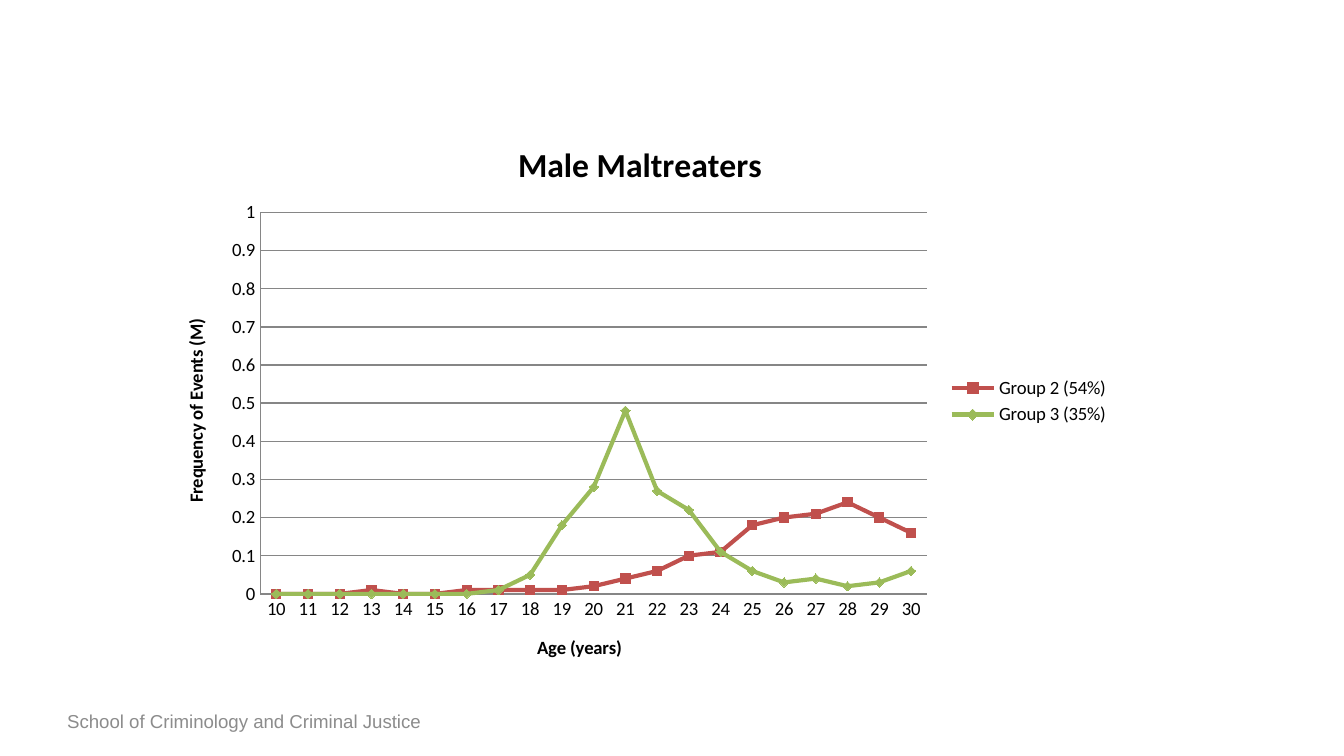
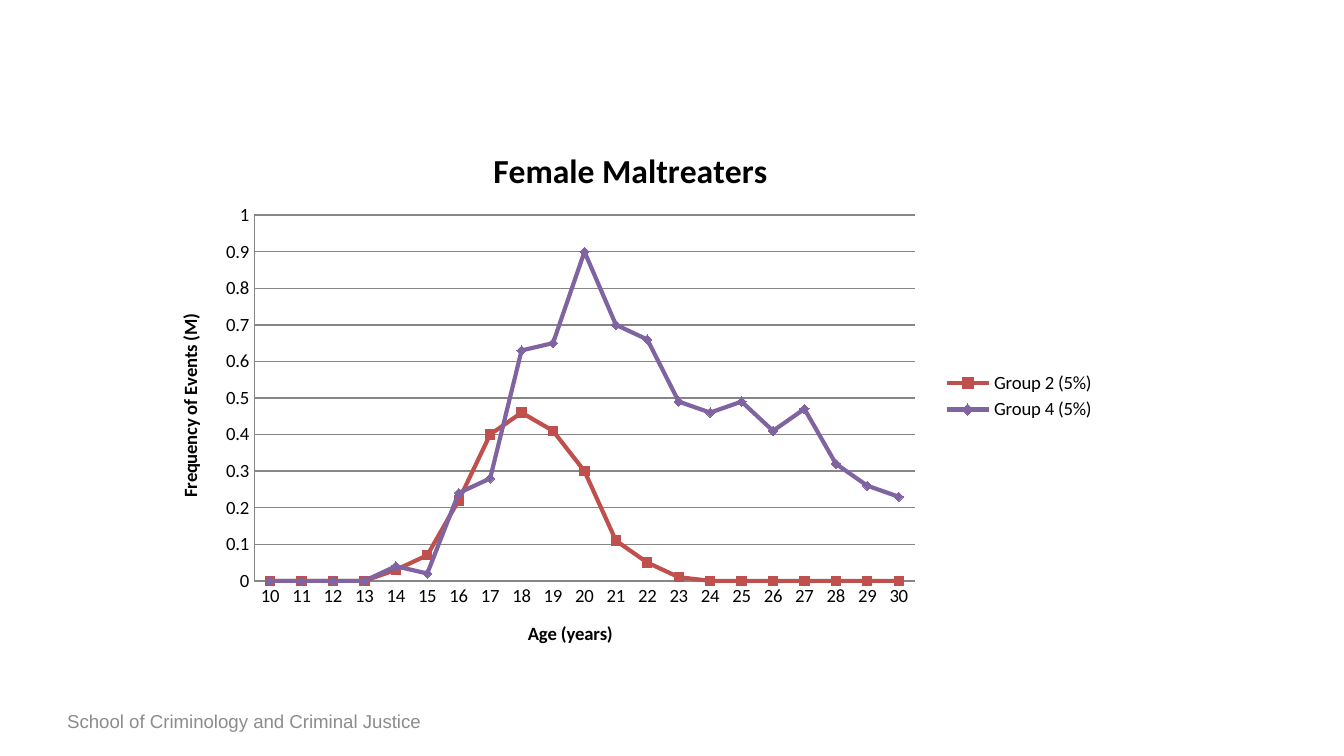
"""Build two slides that chart how often maltreatment occurs by age."""
from dataclasses import dataclass

from lxml.etree import SubElement
from pptx import Presentation
from pptx.chart.data import CategoryChartData
from pptx.dml.color import RGBColor
from pptx.enum.chart import XL_CHART_TYPE, XL_LEGEND_POSITION, XL_MARKER_STYLE, XL_TICK_MARK
from pptx.enum.text import MSO_ANCHOR
from pptx.oxml.ns import qn
from pptx.util import Emu, Pt

SCALE = 5715
BLACK = RGBColor(0x00, 0x00, 0x00)
GREY = RGBColor(0x8C, 0x8C, 0x8C)
RULE = RGBColor(0x86, 0x86, 0x86)
RED = RGBColor(0xC0, 0x50, 0x4D)
GREEN = RGBColor(0x9B, 0xBB, 0x59)
PURPLE = RGBColor(0x80, 0x64, 0xA2)
AGES = [str(age) for age in range(10, 31)]
MARKS = (XL_MARKER_STYLE.SQUARE, XL_MARKER_STYLE.DIAMOND)


@dataclass(frozen=True)
class Box:
    left: int
    top: int
    width: int
    height: int

    def emu(self) -> tuple:
        return tuple(px(n) for n in (self.left, self.top, self.width, self.height))


@dataclass(frozen=True)
class Group:
    name: str
    color: RGBColor
    values: tuple


@dataclass(frozen=True)
class Panel:
    title: str
    box: Box
    groups: tuple


FOOTER = Box(80, 834, 1440, 48)
PANELS = (
    Panel("Male Maltreaters", Box(187, 139, 1150, 678), (
        Group("Group 2 (54%)", RED, (
            0, 0, 0, 0.01, 0, 0, 0.01, 0.01, 0.01, 0.01, 0.02,
            0.04, 0.06, 0.1, 0.11, 0.18, 0.2, 0.21, 0.24, 0.2, 0.16)),
        Group("Group 3 (35%)", GREEN, (
            0, 0, 0, 0, 0, 0, 0, 0.01, 0.05, 0.18, 0.28,
            0.48, 0.27, 0.22, 0.11, 0.06, 0.03, 0.04, 0.02, 0.03, 0.06)),
    )),
    Panel("Female Maltreaters", Box(181, 147, 1139, 650), (
        Group("Group 2 (5%)", RED, (
            0, 0, 0, 0, 0.03, 0.07, 0.22, 0.4, 0.46, 0.41, 0.3,
            0.11, 0.05, 0.01, 0, 0, 0, 0, 0, 0, 0)),
        Group("Group 4 (5%)", PURPLE, (
            0, 0, 0, 0, 0.04, 0.02, 0.24, 0.28, 0.63, 0.65, 0.9,
            0.7, 0.66, 0.49, 0.46, 0.49, 0.41, 0.47, 0.32, 0.26, 0.23)),
    )),
)


def px(count: int) -> Emu:
    return Emu(count * SCALE)


def write(frame, text: str, *, size: int = 10, bold: bool = False,
          font: str = "Calibri", color: RGBColor = BLACK) -> None:
    run = frame.paragraphs[0].add_run()
    run.text = text
    run.font.size = Pt(size)
    run.font.bold = bold
    run.font.name = font
    run.font.color.rgb = color


def add_footer(slide) -> None:
    frame = slide.shapes.add_textbox(*FOOTER.emu()).text_frame
    frame.margin_left = frame.margin_right = frame.margin_top = frame.margin_bottom = 0
    frame.word_wrap = True
    frame.vertical_anchor = MSO_ANCHOR.MIDDLE
    write(frame, "School of Criminology and Criminal Justice", font="Arial", color=GREY)


def rule(line) -> None:
    line.color.rgb = RULE
    line.width = Pt(0.75)


def style_axis(axis, title: str) -> None:
    axis.major_tick_mark = axis.minor_tick_mark = XL_TICK_MARK.NONE
    rule(axis.format.line)
    write(axis.axis_title.text_frame, title, bold=True)


def style_line(line, group: Group, mark: XL_MARKER_STYLE) -> None:
    line.smooth = False
    line.format.line.color.rgb = group.color
    line.format.line.width = Pt(2.25)
    line.marker.style = mark
    line.marker.size = 5
    line.marker.format.fill.solid()
    line.marker.format.fill.fore_color.rgb = group.color
    line.marker.format.line.color.rgb = group.color


def set_plot(chart) -> None:
    area = chart.element.find(".//" + qn("c:plotArea"))
    layout = area.find(qn("c:layout"))
    if layout is None:
        layout = SubElement(area, qn("c:layout"))
        area.insert(0, layout)
    manual = SubElement(layout, qn("c:manualLayout"))
    for tag, value in (("layoutTarget", "inner"), ("xMode", "edge"), ("yMode", "edge"),
                       ("x", "0.107"), ("y", "0.168"), ("w", "0.69"), ("h", "0.67")):
        SubElement(manual, qn("c:" + tag)).set("val", value)


def add_panel(slide, panel: Panel) -> None:
    data = CategoryChartData()
    data.categories = AGES
    for group in panel.groups:
        data.add_series(group.name, group.values)
    chart = slide.shapes.add_chart(XL_CHART_TYPE.LINE_MARKERS, *panel.box.emu(), data).chart
    chart.font.name = "Calibri"
    chart.font.size = Pt(10)
    chart.font.color.rgb = BLACK
    write(chart.chart_title.text_frame, panel.title, size=18, bold=True)
    chart.chart_title.include_in_layout = False
    chart.has_legend = True
    chart.legend.position = XL_LEGEND_POSITION.RIGHT
    chart.legend.include_in_layout = False
    style_axis(chart.category_axis, "Age (years)")
    axis = chart.value_axis
    style_axis(axis, "Frequency of Events (M)")
    axis.minimum_scale, axis.maximum_scale, axis.major_unit = 0, 1, 0.1
    rule(axis.major_gridlines.format.line)
    chart.plots[0].vary_by_categories = False
    for line, group, mark in zip(chart.plots[0].series, panel.groups, MARKS):
        style_line(line, group, mark)
    set_plot(chart)


def main() -> None:
    deck = Presentation()
    deck.slide_width, deck.slide_height = px(1600), px(900)
    for panel in PANELS:
        slide = deck.slides.add_slide(deck.slide_layouts[6])
        add_footer(slide)
        add_panel(slide, panel)
    deck.save("out.pptx")


if __name__ == "__main__":
    main()
